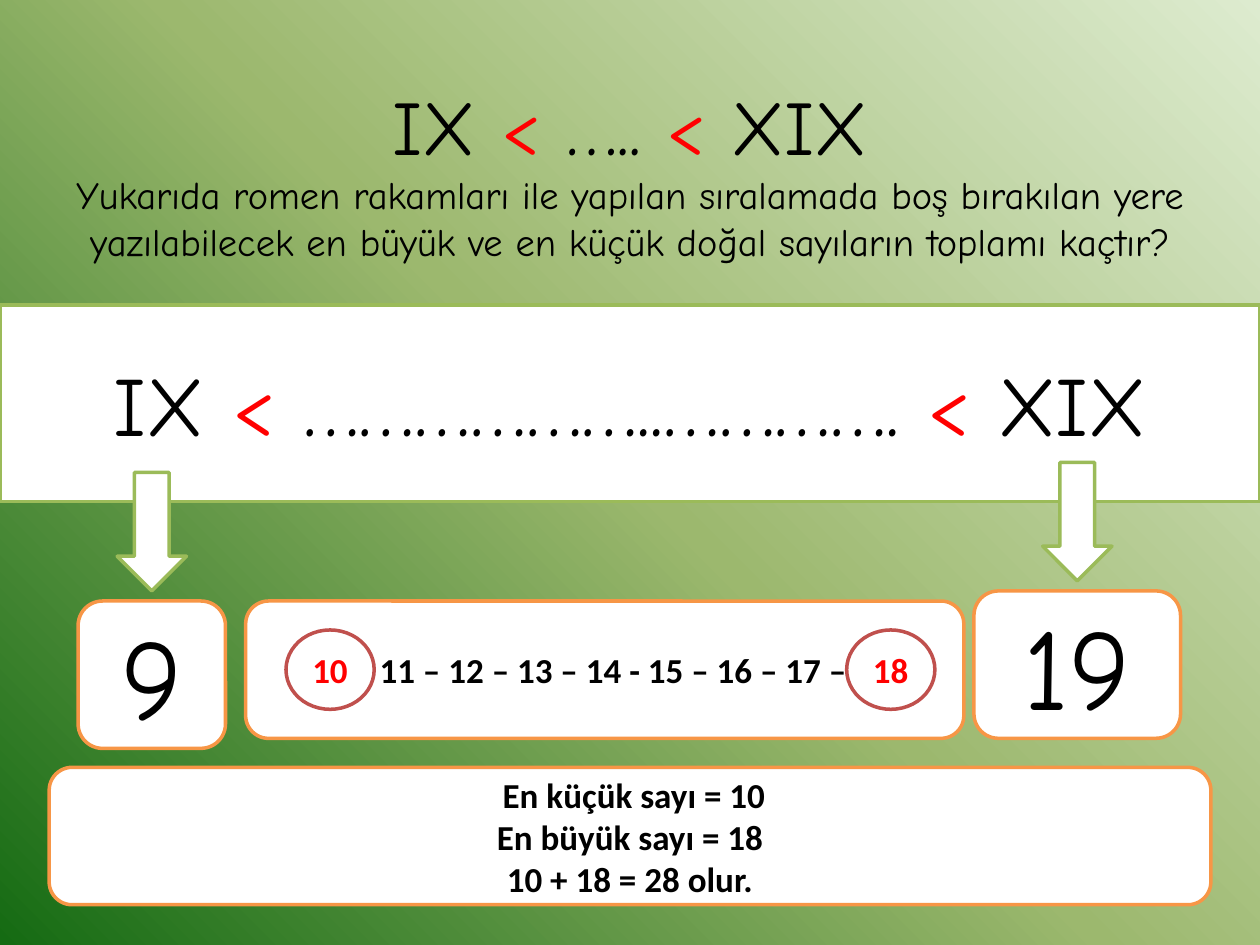
from copy import deepcopy

from pptx import Presentation
from pptx.dml.color import RGBColor
from pptx.enum.shapes import MSO_SHAPE
from pptx.enum.text import MSO_ANCHOR, PP_ALIGN
from pptx.oxml.ns import qn
from pptx.util import Inches, Pt

BLACK = RGBColor(0x00, 0x00, 0x00)
WHITE = RGBColor(0xFF, 0xFF, 0xFF)
RED = RGBColor(0xFF, 0x00, 0x00)
GREEN = RGBColor(0x9B, 0xBB, 0x59)
ORANGE = RGBColor(0xF7, 0x96, 0x46)
BRICK = RGBColor(0xC0, 0x50, 0x4D)
BACKGROUND_STOPS = [
    (0, RGBColor(0xDD, 0xEB, 0xCF)),
    (0.5, RGBColor(0x9C, 0xB8, 0x6E)),
    (1, RGBColor(0x15, 0x6B, 0x13)),
]
HAND_FONT = "Comic Neue"
PLAIN_FONT = "Calibri"


def paint_background(slide):
    fill = slide.background.fill
    fill.gradient()
    fill.gradient_angle = 225
    stop_list = next(slide.element.iter(qn("a:gsLst")))
    stop_list.append(deepcopy(stop_list[0]))
    for stop, (position, color) in zip(fill.gradient_stops, BACKGROUND_STOPS):
        stop.position = position
        stop.color.rgb = color


def add_run(paragraph, text, size, font=HAND_FONT, color=BLACK, bold=False):
    run = paragraph.add_run()
    run.text = text
    run.font.name = font
    run.font.size = Pt(size)
    run.font.bold = bold
    run.font.color.rgb = color


def add_comparison(paragraph, gap, size):
    paragraph.alignment = PP_ALIGN.CENTER
    for text, color in [("IX ", BLACK), ("<", RED), (f" {gap} ", BLACK),
                        ("<", RED), (" XIX", BLACK)]:
        add_run(paragraph, text, size, color=color)


def add_box(slide, kind, box, line_color):
    shape = slide.shapes.add_shape(kind, *(Inches(length) for length in box))
    shape.shadow.inherit = False
    shape.fill.solid()
    shape.fill.fore_color.rgb = WHITE
    shape.line.color.rgb = line_color
    shape.line.width = Pt(2)
    return shape


def add_label(slide, kind, box, line_color, lines, size, **style):
    text_frame = add_box(slide, kind, box, line_color).text_frame
    text_frame.vertical_anchor = MSO_ANCHOR.MIDDLE
    text_frame.margin_left = text_frame.margin_right = 0
    for index, line in enumerate(lines):
        paragraph = text_frame.add_paragraph() if index else text_frame.paragraphs[0]
        paragraph.alignment = PP_ALIGN.CENTER
        add_run(paragraph, line, size, **style)


def add_question(slide, box):
    title = slide.shapes.title
    title.left, title.top, title.width, title.height = (Inches(length) for length in box)
    title.text_frame.vertical_anchor = MSO_ANCHOR.MIDDLE
    paragraph = title.text_frame.paragraphs[0]
    add_comparison(paragraph, "…..", 44)
    paragraph.add_line_break()
    add_run(paragraph, "Yukarıda romen rakamları ile yapılan sıralamada boş bırakılan yere "
            "yazılabilecek en büyük ve en küçük doğal sayıların toplamı kaçtır?", 22)


def add_band(slide, box):
    band = add_box(slide, MSO_SHAPE.RECTANGLE, box, GREEN)
    band.text_frame.vertical_anchor = MSO_ANCHOR.MIDDLE
    add_comparison(band.text_frame.paragraphs[0], "………………..………….", 48)


def add_bound(slide, box, number):
    left, top, width, height = box
    arrow_width, arrow_height, gap = 0.55, 0.94, 0.08
    arrow_box = (left + (width - arrow_width) / 2, top - gap - arrow_height,
                 arrow_width, arrow_height)
    add_box(slide, MSO_SHAPE.DOWN_ARROW, arrow_box, GREEN)
    add_label(slide, MSO_SHAPE.ROUNDED_RECTANGLE, box, ORANGE, [number], 66)


def add_number_row(slide, box):
    left, top, width, height = box
    add_label(slide, MSO_SHAPE.ROUNDED_RECTANGLE, box, ORANGE,
              ["10 – 11 – 12 – 13 – 14 - 15 – 16 – 17 – 18 "], 20,
              font=PLAIN_FONT, bold=True)
    for number, offset in [("10", 0.32), ("18", 4.77)]:
        ring = (left + offset, top + (height - 0.63) / 2, 0.7, 0.63)
        add_label(slide, MSO_SHAPE.OVAL, ring, BRICK, [number], 20,
                  font=PLAIN_FONT, color=RED, bold=True)


def add_answer(slide, box):
    add_label(slide, MSO_SHAPE.ROUNDED_RECTANGLE, box, ORANGE,
              [" En küçük sayı = 10", "En büyük sayı = 18", "10 + 18 = 28 olur."],
              20, font=PLAIN_FONT, bold=True)


def main():
    presentation = Presentation()
    presentation.slide_width = Inches(10)
    presentation.slide_height = Inches(7.5)
    slide = presentation.slides.add_slide(presentation.slide_layouts[5])
    paint_background(slide)
    add_question(slide, (0.5, 0.3, 9, 2.12))
    add_band(slide, (0, 2.42, 10, 1.56))
    add_bound(slide, (0.62, 4.77, 1.17, 1.17), "9")
    add_bound(slide, (7.73, 4.69, 1.64, 1.17), "19")
    add_number_row(slide, (1.95, 4.77, 5.7, 1.09))
    add_answer(slide, (0.39, 6.09, 9.22, 1.09))
    presentation.save("out.pptx")


if __name__ == "__main__":
    main()
